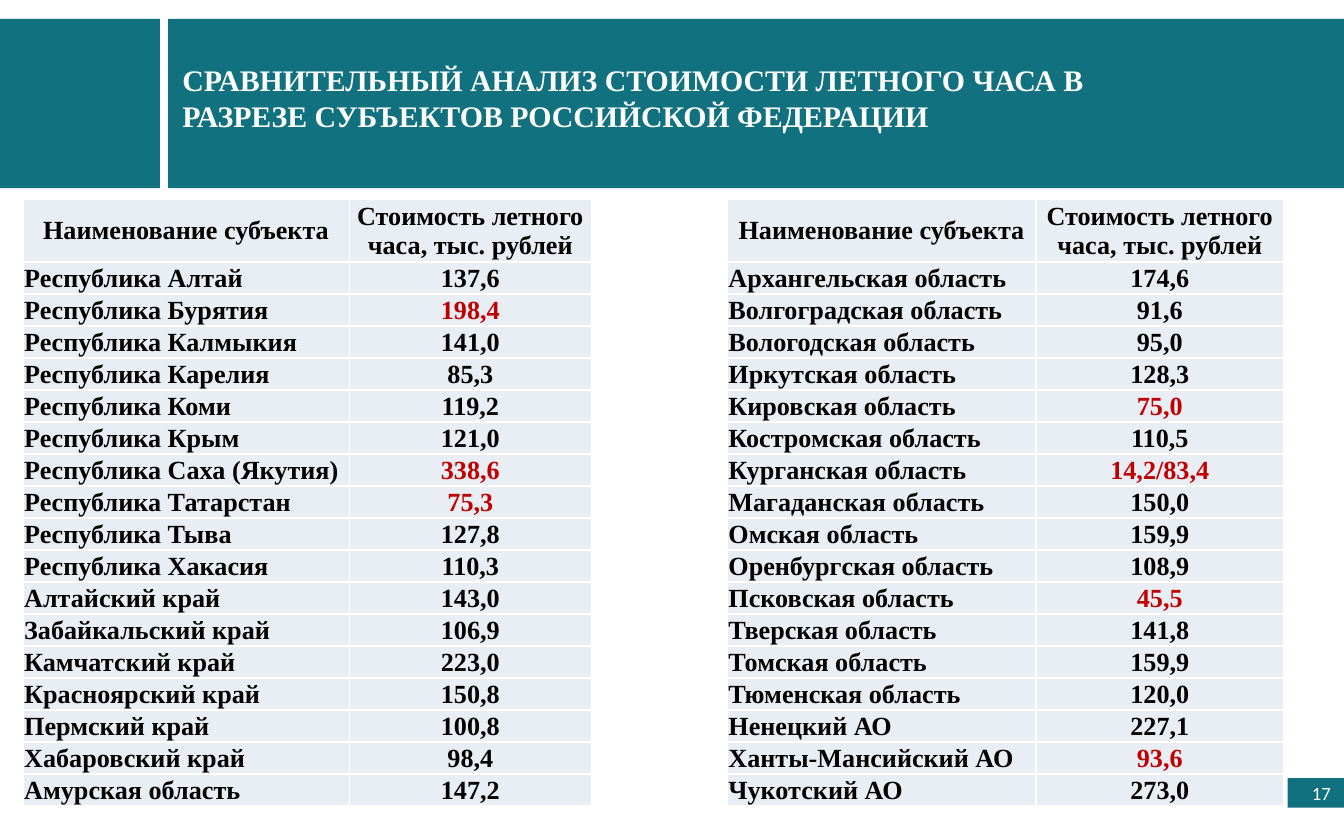
"""Build the slide comparing flight-hour cost across the regions of Russia."""
from dataclasses import dataclass
from typing import NamedTuple

from lxml import etree
from pptx import Presentation
from pptx.dml.color import RGBColor
from pptx.enum.shapes import MSO_SHAPE
from pptx.enum.text import MSO_ANCHOR, PP_ALIGN
from pptx.oxml.ns import qn
from pptx.util import Inches, Pt

RECTANGLE = MSO_SHAPE.RECTANGLE
MIDDLE = MSO_ANCHOR.MIDDLE
LEFT, CENTER, RIGHT = PP_ALIGN.LEFT, PP_ALIGN.CENTER, PP_ALIGN.RIGHT


@dataclass(frozen=True)
class Theme:
    teal: str = "11717E"
    white: str = "FFFFFF"
    black: str = "000000"
    red: str = "C00000"
    cell: str = "E9EDF4"
    serif: str = "Times New Roman"
    sans: str = "Calibri"
    title_size: int = 16
    table_size: int = 14
    number_size: int = 10
    border_width: int = 1


class Box(NamedTuple):
    left: float
    top: float
    width: float
    height: float


class Region(NamedTuple):
    name: str
    cost: str
    highlighted: bool = False


class CostTable(NamedTuple):
    left: float
    column_widths: tuple[float, float]
    regions: list[Region]


THEME = Theme()
TITLE = "СРАВНИТЕЛЬНЫЙ АНАЛИЗ СТОИМОСТИ ЛЕТНОГО ЧАСА В РАЗРЕЗЕ СУБЪЕКТОВ РОССИЙСКОЙ ФЕДЕРАЦИИ"
HEADINGS = ("Наименование субъекта", "Стоимость летного часа, тыс. рублей")
TABLE_TOP = 1.48
HEADER_HEIGHT = 0.47
BODY_HEIGHT = 4.05
BANDS = [Box(1.25, 0.14, 8.75, 1.26), Box(0, 0.14, 1.19, 1.26)]
NUMBER_BOX = Box(9.58, 5.79, 0.42, 0.22)
TITLE_BOX = Box(1.26, 0.41, 7.4, 0.64)

COST_TABLES = [
    CostTable(0.17, (2.43, 1.8), [
        Region("Республика Алтай", "137,6"),
        Region("Республика Бурятия", "198,4", True),
        Region("Республика Калмыкия", "141,0"),
        Region("Республика Карелия", "85,3"),
        Region("Республика Коми", "119,2"),
        Region("Республика Крым", "121,0"),
        Region("Республика Саха (Якутия)", "338,6", True),
        Region("Республика Татарстан", "75,3", True),
        Region("Республика Тыва", "127,8"),
        Region("Республика Хакасия", "110,3"),
        Region("Алтайский край", "143,0"),
        Region("Забайкальский край", "106,9"),
        Region("Камчатский край", "223,0"),
        Region("Красноярский край", "150,8"),
        Region("Пермский край", "100,8"),
        Region("Хабаровский край", "98,4"),
        Region("Амурская область", "147,2"),
    ]),
    CostTable(5.41, (2.3, 1.84), [
        Region("Архангельская область", "174,6"),
        Region("Волгоградская область", "91,6"),
        Region("Вологодская область", "95,0"),
        Region("Иркутская область", "128,3"),
        Region("Кировская область", "75,0", True),
        Region("Костромская область", "110,5"),
        Region("Курганская область", "14,2/83,4", True),
        Region("Магаданская область", "150,0"),
        Region("Омская область", "159,9"),
        Region("Оренбургская область", "108,9"),
        Region("Псковская область", "45,5", True),
        Region("Тверская область", "141,8"),
        Region("Томская область", "159,9"),
        Region("Тюменская область", "120,0"),
        Region("Ненецкий АО", "227,1"),
        Region("Ханты-Мансийский АО", "93,6", True),
        Region("Чукотский АО", "273,0"),
    ]),
]


def write(frame, text: str, color: str, size: int, font: str = THEME.serif,
          bold: bool = True, align=LEFT) -> None:
    """Write one formatted paragraph into a text frame."""
    paragraph = frame.paragraphs[0]
    paragraph.alignment = align
    run = paragraph.add_run()
    run.text = text
    formats = {"name": font, "size": Pt(size), "bold": bold}
    for attribute, value in formats.items():
        setattr(run.font, attribute, value)
    run.font.color.rgb = RGBColor.from_string(color)


def draw_band(slide, box: Box):
    """Draw a plain teal rectangle."""
    band = slide.shapes.add_shape(RECTANGLE, *map(Inches, box))
    band.shadow.inherit = False
    band.fill.solid()
    band.fill.fore_color.rgb = RGBColor.from_string(THEME.teal)
    band.line.fill.background()
    return band


def draw_title(slide) -> None:
    """Place the wrapped title over the wide band."""
    frame = slide.shapes.add_textbox(*map(Inches, TITLE_BOX)).text_frame
    frame.word_wrap = True
    write(frame, TITLE, THEME.white, THEME.title_size)


def draw_number(slide) -> None:
    """Draw the slide number on its teal tab."""
    frame = draw_band(slide, NUMBER_BOX).text_frame
    frame.vertical_anchor = MIDDLE
    write(frame, "17", THEME.white, THEME.number_size, THEME.sans, False, RIGHT)


def fill_cell(cell, text: str, color: str, align) -> None:
    """Give a cell its borders, fill, margins and text."""
    properties = cell._tc.get_or_add_tcPr()
    for side in ("a:lnL", "a:lnR", "a:lnT", "a:lnB"):
        border = etree.SubElement(properties, qn(side), w=str(Pt(THEME.border_width)))
        paint = etree.SubElement(border, qn("a:solidFill"))
        etree.SubElement(paint, qn("a:srgbClr"), val=THEME.white)
    cell.fill.solid()
    cell.fill.fore_color.rgb = RGBColor.from_string(THEME.cell)
    layout = {"margin_left": Inches(0.01), "margin_right": Inches(0.01),
              "margin_top": Inches(0.01), "margin_bottom": 0,
              "vertical_anchor": MIDDLE}
    for attribute, value in layout.items():
        setattr(cell, attribute, value)
    write(cell.text_frame, text, color, THEME.table_size, align=align)


def draw_costs(slide, costs: CostTable) -> None:
    """Draw one table of regions and their flight-hour costs."""
    box = Box(costs.left, TABLE_TOP, sum(costs.column_widths), HEADER_HEIGHT + BODY_HEIGHT)
    table = slide.shapes.add_table(
        len(costs.regions) + 1, len(HEADINGS), *map(Inches, box)).table
    table.horz_banding = False
    for column, width in zip(table.columns, costs.column_widths):
        column.width = Inches(width)
    for row in table.rows:
        row.height = Inches(BODY_HEIGHT / len(costs.regions))
    table.rows[0].height = Inches(HEADER_HEIGHT)
    for index, heading in enumerate(HEADINGS):
        fill_cell(table.cell(0, index), heading, THEME.black, CENTER)
    for index, region in enumerate(costs.regions, start=1):
        cost_color = THEME.red if region.highlighted else THEME.black
        fill_cell(table.cell(index, 0), region.name, THEME.black, LEFT)
        fill_cell(table.cell(index, 1), region.cost, cost_color, CENTER)


def main() -> None:
    """Assemble and save the slide."""
    presentation = Presentation()
    presentation.slide_width = Inches(10)
    presentation.slide_height = Inches(6.25)
    slide = presentation.slides.add_slide(presentation.slide_layouts[6])
    for band in BANDS:
        draw_band(slide, band)
    draw_number(slide)
    for costs in COST_TABLES:
        draw_costs(slide, costs)
    draw_title(slide)
    presentation.save("out.pptx")


if __name__ == "__main__":
    main()
